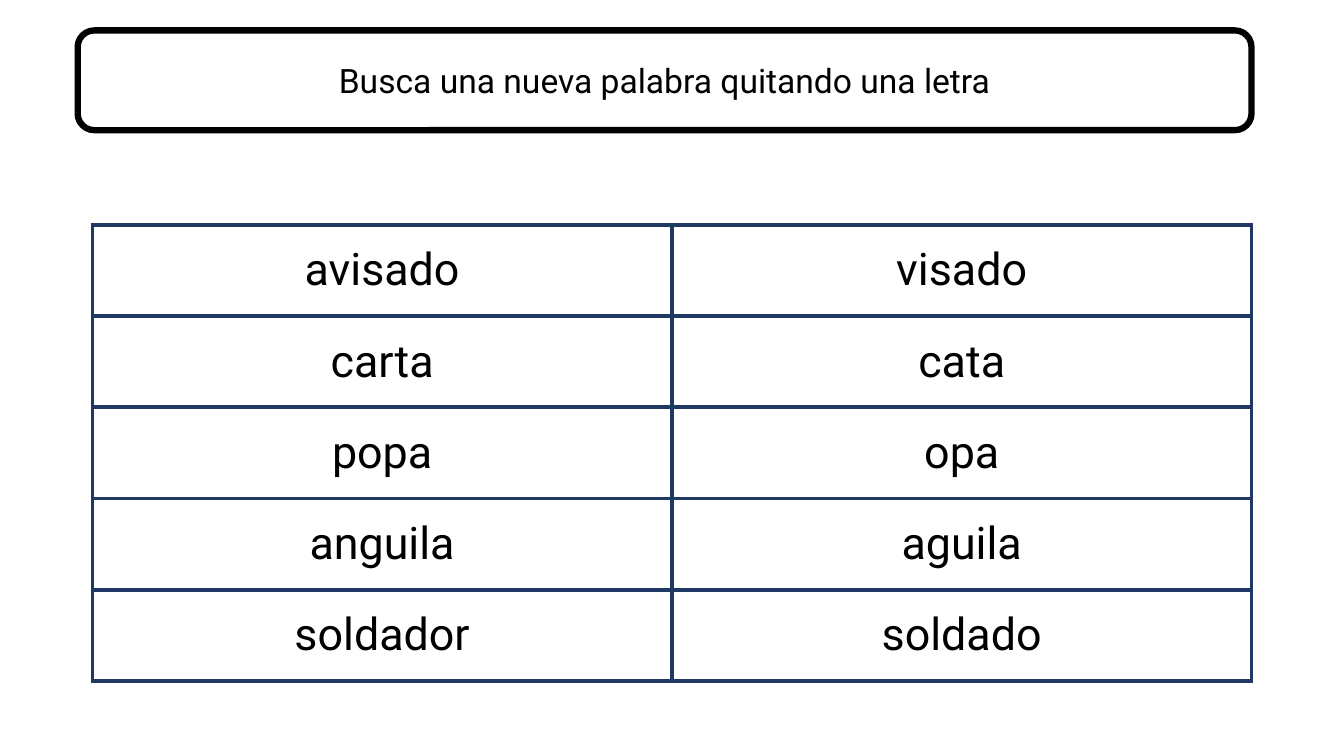
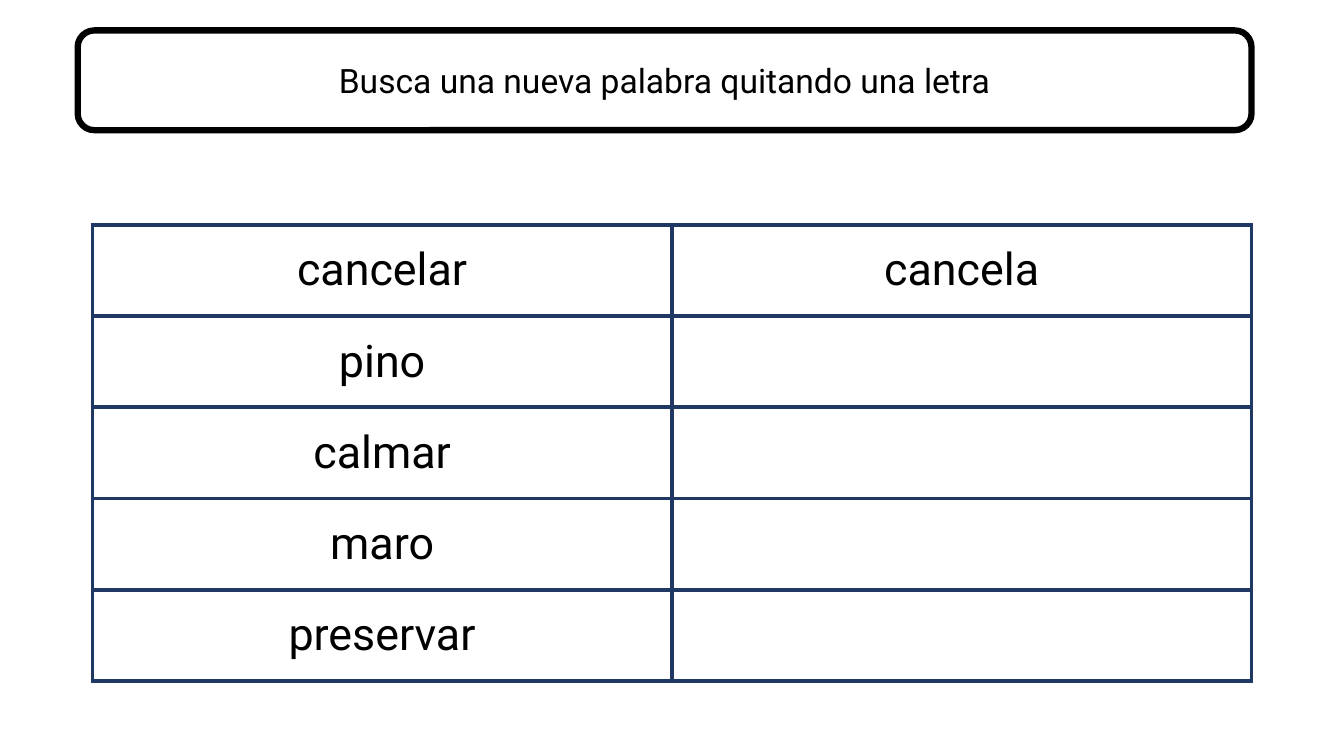
from dataclasses import dataclass

import pptx
import pptx.dml.color
import pptx.enum.shapes
import pptx.enum.text
import pptx.oxml
import pptx.oxml.ns
import pptx.presentation
import pptx.slide
import pptx.table
import pptx.text.text
import pptx.util

# Shared look
PX = 9525  # EMU per px, 96 px to the inch
FONT = "Roboto"
BLACK, WHITE, NAVY = "000000", "FFFFFF", "203864"
TITLE = "Busca una nueva palabra quitando una letra"
TITLE_SIZE, WORD_SIZE = 24, 32
TITLE_LINE, BORDER_LINE = 4.5, 3
ROW_HEIGHT = 87


@dataclass(frozen=True)
class Area:
    left: int
    top: int
    width: int
    height: int

    def emu(self) -> list[int]:
        return [px(n) for n in (self.left, self.top, self.width, self.height)]


@dataclass(frozen=True)
class WordPair:
    word: str
    answer: str = ""


TITLE_AREA = Area(74, 29, 1118, 95)
TABLE_LEFT, TABLE_TOP, TABLE_WIDTH = 88, 214, 1104

EXERCISES = [
    [
        WordPair("avisado", "visado"),
        WordPair("carta", "cata"),
        WordPair("popa", "opa"),
        WordPair("anguila", "aguila"),
        WordPair("soldador", "soldado"),
    ],
    [
        WordPair("cancelar", "cancela"),
        WordPair("pino"),
        WordPair("calmar"),
        WordPair("maro"),
        WordPair("preservar"),
    ],
]


def px(length: int) -> int:
    return pptx.util.Emu(length * PX)


def color(value: str) -> pptx.dml.color.RGBColor:
    return pptx.dml.color.RGBColor.from_string(value)


def write_centered(frame: pptx.text.text.TextFrame, text: str, size: int) -> None:
    frame.text = text
    para = frame.paragraphs[0]
    para.alignment = pptx.enum.text.PP_ALIGN.CENTER
    para.font.name = FONT
    para.font.size = pptx.util.Pt(size)
    para.font.color.rgb = color(BLACK)


def add_title(page: pptx.slide.Slide) -> None:
    box = page.shapes.add_shape(
        pptx.enum.shapes.MSO_SHAPE.ROUNDED_RECTANGLE, *TITLE_AREA.emu()
    )
    box.shadow.inherit = False
    box.fill.solid()
    box.fill.fore_color.rgb = color(WHITE)
    box.line.color.rgb = color(BLACK)
    box.line.width = pptx.util.Pt(TITLE_LINE)
    box.text_frame.vertical_anchor = pptx.enum.text.MSO_ANCHOR.MIDDLE
    write_centered(box.text_frame, TITLE, TITLE_SIZE)


def add_borders(cell: pptx.table._Cell) -> None:
    properties = cell._tc.get_or_add_tcPr()
    namespace = pptx.oxml.ns.nsdecls("a")
    width = pptx.util.Pt(BORDER_LINE)
    # Borders come before the fill in the cell properties
    for index, side in enumerate(("lnL", "lnR", "lnT", "lnB")):
        border = pptx.oxml.parse_xml(
            f'<a:{side} {namespace} w="{width}"><a:solidFill>'
            f'<a:srgbClr val="{NAVY}"/></a:solidFill></a:{side}>'
        )
        properties.insert(index, border)


def fill_cell(cell: pptx.table._Cell, text: str) -> None:
    cell.fill.solid()
    cell.fill.fore_color.rgb = color(WHITE)
    cell.vertical_anchor = pptx.enum.text.MSO_ANCHOR.MIDDLE
    write_centered(cell.text_frame, text, WORD_SIZE)
    add_borders(cell)


def add_word_table(page: pptx.slide.Slide, pairs: list[WordPair]) -> None:
    area = Area(TABLE_LEFT, TABLE_TOP, TABLE_WIDTH, ROW_HEIGHT * len(pairs))
    table = page.shapes.add_table(len(pairs), 2, *area.emu()).table
    table.first_row = False
    table.horz_banding = False
    for row, pair in enumerate(pairs):
        fill_cell(table.cell(row, 0), pair.word)
        fill_cell(table.cell(row, 1), pair.answer)


def add_exercise(deck: pptx.presentation.Presentation, pairs: list[WordPair]) -> None:
    page = deck.slides.add_slide(deck.slide_layouts[6])
    add_title(page)
    add_word_table(page, pairs)


def main() -> None:
    deck = pptx.Presentation()
    deck.slide_width, deck.slide_height = px(1280), px(720)
    for pairs in EXERCISES:
        add_exercise(deck, pairs)
    deck.save("out.pptx")


if __name__ == "__main__":
    main()
